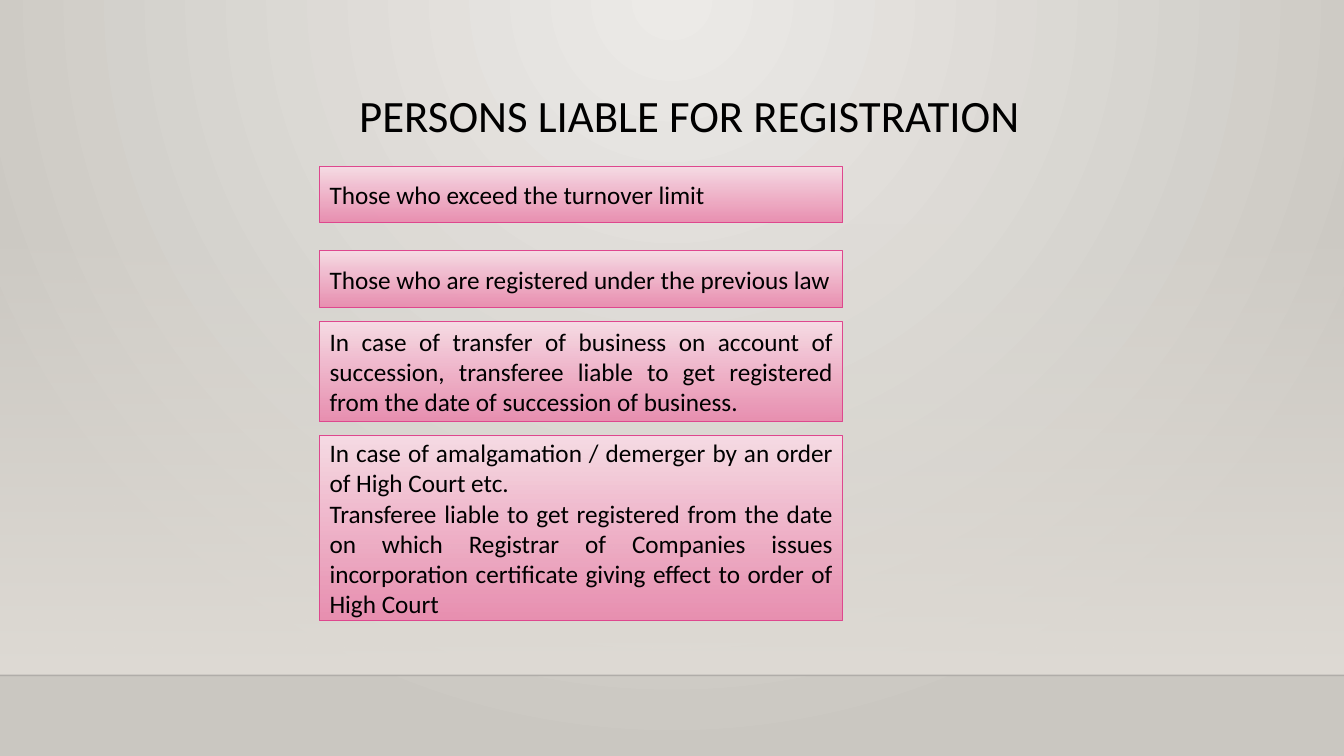
from dataclasses import dataclass

from lxml import etree
from pptx import Presentation
from pptx.dml.color import RGBColor
from pptx.dml.fill import FillFormat
from pptx.enum.shapes import MSO_CONNECTOR, MSO_SHAPE
from pptx.enum.text import MSO_ANCHOR, PP_ALIGN
from pptx.oxml.ns import qn
from pptx.shapes.autoshape import Shape
from pptx.slide import Slide
from pptx.text.text import TextFrame
from pptx.util import Inches, Pt


@dataclass(frozen=True)
class GradientStop:
    color: str
    opacity: int = 100


@dataclass(frozen=True)
class Theme:
    font: str = "Calibri"
    title_size: int = 32
    body_size: int = 18
    text: str = "000000"
    box_line: str = "DE478E"
    floor_line: str = "000001"
    floor_line_opacity: int = 20
    background: tuple[GradientStop, ...] = (GradientStop("ECEAE7"), GradientStop("CAC7C1"))
    wall: tuple[GradientStop, ...] = (GradientStop("DFDBD5", 0), GradientStop("DFDBD5"))
    box: tuple[GradientStop, ...] = (GradientStop("F7DCE5"), GradientStop("EA8AAE", 92))


@dataclass(frozen=True)
class LiabilityBox:
    top: float
    height: float
    paragraphs: tuple[str, ...]


THEME = Theme()
SLIDE_WIDTH, SLIDE_HEIGHT = 13.33, 7.5
WALL_TOP, FLOOR_TOP = 2.21, 6.7
BOX_LEFT, BOX_WIDTH = 3.17, 5.19
DOWNWARD = 270

TITLE = "PERSONS LIABLE FOR REGISTRATION"
BOXES = (
    LiabilityBox(1.65, 0.56, ("Those who exceed the turnover limit",)),
    LiabilityBox(2.49, 0.56, ("Those who are registered under the previous law",)),
    LiabilityBox(3.19, 0.99, (
        "In case of transfer of business on account of succession, transferee liable "
        "to get registered from the date of succession of business.",
    )),
    LiabilityBox(4.32, 1.84, (
        "In case of amalgamation / demerger by an order of High Court etc.",
        "Transferee liable to get registered from the date on which Registrar of "
        "Companies issues incorporation certificate giving effect to order of High Court",
    )),
)


def set_opacity(color: etree._Element, percent: int) -> None:
    if percent < 100:
        etree.SubElement(color, qn("a:alpha")).set("val", str(percent * 1000))


def apply_gradient(
    fill: FillFormat, owner: etree._Element, stops: tuple[GradientStop, ...]
) -> etree._Element:
    """Fill from top to bottom and return the gradient element found in owner."""
    fill.gradient()
    fill.gradient_angle = DOWNWARD
    for target, stop in zip(fill.gradient_stops, stops):
        target.color.rgb = RGBColor.from_string(stop.color)
    gradient = next(owner.iter(qn("a:gradFill")))
    for color, stop in zip(gradient.iter(qn("a:srgbClr")), stops):
        set_opacity(color, stop.opacity)
    return gradient


def paint_background(slide: Slide) -> None:
    """Spread the background gradient in circles from the top centre."""
    gradient = apply_gradient(slide.background.fill, slide.element, THEME.background)
    gradient.remove(gradient.find(qn("a:lin")))
    circle = etree.SubElement(gradient, qn("a:path"))
    circle.set("path", "circle")
    center = etree.SubElement(circle, qn("a:fillToRect"))
    for side, percent in (("l", 43), ("t", 0), ("r", 43), ("b", 100)):
        center.set(side, str(percent * 1000))


def add_gradient_rectangle(
    slide: Slide, left: float, top: float, width: float, height: float,
    stops: tuple[GradientStop, ...],
) -> Shape:
    shape = slide.shapes.add_shape(
        MSO_SHAPE.RECTANGLE, Inches(left), Inches(top), Inches(width), Inches(height)
    )
    shape.shadow.inherit = False
    apply_gradient(shape.fill, shape.element, stops)
    shape.line.fill.background()
    return shape


def add_floor_line(slide: Slide) -> None:
    connector = slide.shapes.add_connector(
        MSO_CONNECTOR.STRAIGHT, 0, Inches(FLOOR_TOP), Inches(SLIDE_WIDTH), Inches(FLOOR_TOP)
    )
    connector.line.color.rgb = RGBColor.from_string(THEME.floor_line)
    connector.line.width = Pt(1)
    set_opacity(next(connector.element.iter(qn("a:srgbClr"))), THEME.floor_line_opacity)
    etree.SubElement(connector.element.spPr, qn("a:effectLst"))


def write_paragraphs(
    frame: TextFrame, paragraphs: tuple[str, ...], size: int,
    alignment: PP_ALIGN, line_spacing: float = 1.0,
) -> None:
    frame.word_wrap = True
    for index, text in enumerate(paragraphs):
        paragraph = frame.add_paragraph() if index else frame.paragraphs[0]
        paragraph.alignment = alignment
        paragraph.line_spacing = line_spacing
        run = paragraph.add_run()
        run.text = text
        run.font.name = THEME.font
        run.font.size = Pt(size)
        run.font.color.rgb = RGBColor.from_string(THEME.text)


def add_title(slide: Slide) -> None:
    title = slide.shapes.add_textbox(Inches(1.59), Inches(0.88), Inches(10.5), Inches(1.15))
    write_paragraphs(title.text_frame, (TITLE,), THEME.title_size, PP_ALIGN.CENTER, 0.9)


def add_liability_box(slide: Slide, box: LiabilityBox) -> None:
    shape = add_gradient_rectangle(
        slide, BOX_LEFT, box.top, BOX_WIDTH, box.height, THEME.box
    )
    shape.line.color.rgb = RGBColor.from_string(THEME.box_line)
    shape.line.width = Pt(0.75)
    shape.text_frame.vertical_anchor = MSO_ANCHOR.MIDDLE
    write_paragraphs(shape.text_frame, box.paragraphs, THEME.body_size, PP_ALIGN.JUSTIFY)


def main() -> None:
    presentation = Presentation()
    presentation.slide_width = Inches(SLIDE_WIDTH)
    presentation.slide_height = Inches(SLIDE_HEIGHT)
    slide = presentation.slides.add_slide(presentation.slide_layouts[6])
    paint_background(slide)
    add_gradient_rectangle(
        slide, 0, WALL_TOP, SLIDE_WIDTH, FLOOR_TOP - WALL_TOP, THEME.wall
    )
    add_floor_line(slide)
    add_title(slide)
    for box in BOXES:
        add_liability_box(slide, box)
    presentation.save("out.pptx")


if __name__ == "__main__":
    main()
